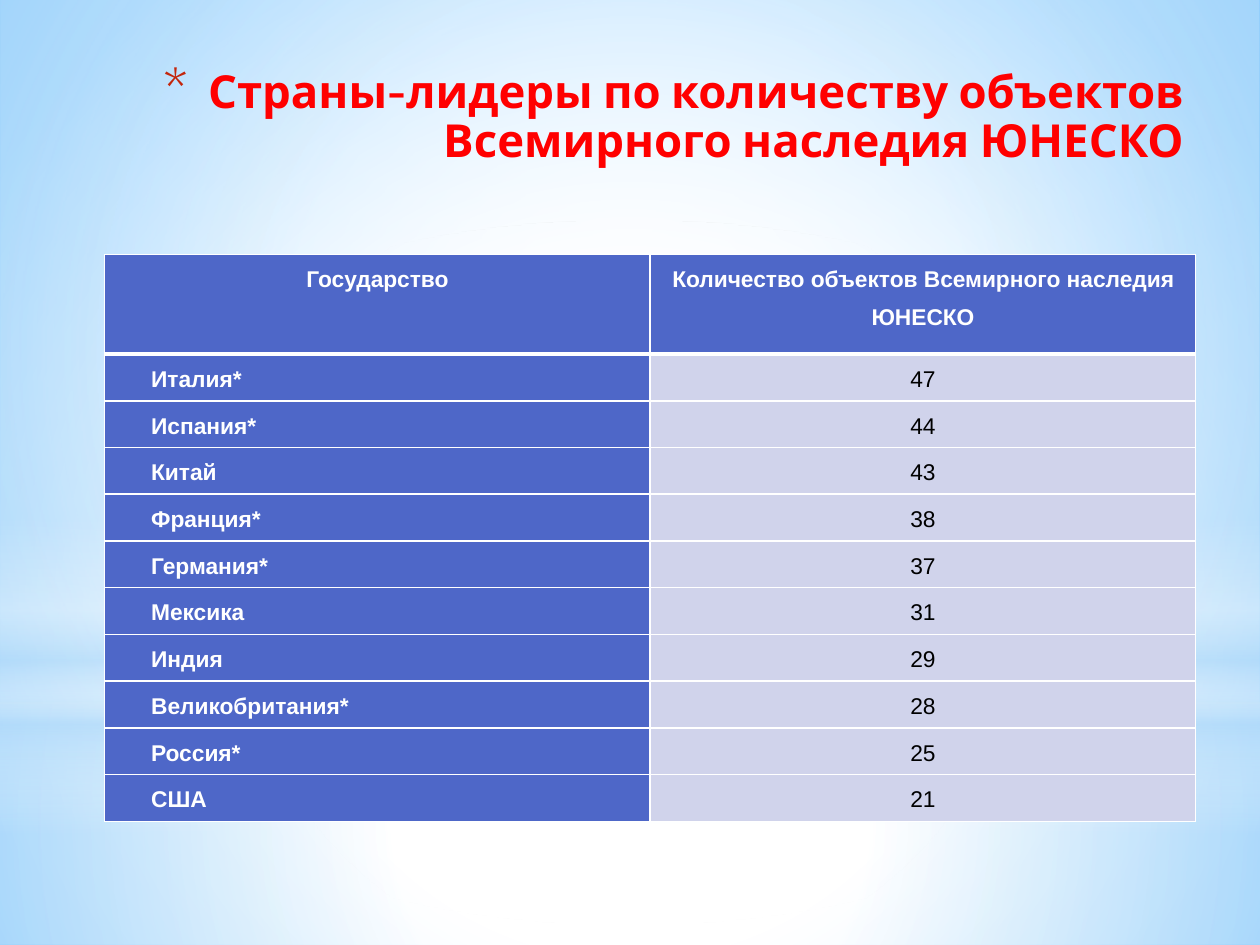
from lxml import etree
from pptx import Presentation
from pptx import util as u
from pptx.dml.color import RGBColor
from pptx.enum import shapes, text
from pptx.oxml import parse_xml
from pptx.oxml.ns import nsdecls, qn

WIDTH, HEIGHT = u.Inches(10), u.Inches(7.5)
WHITE, SKY, INDIGO, LAVENDER = "FFFFFF", "B4DCFA", "4E67C8", "D0D3EB"
CENTRE = (50, 50, 50, 50)
HEADER = ("Государство", "Количество объектов Всемирного наследия ЮНЕСКО")
COUNTRIES = [
    ("Италия*", 47), ("Испания*", 44), ("Китай", 43), ("Франция*", 38),
    ("Германия*", 37), ("Мексика", 31), ("Индия", 29),
    ("Великобритания*", 28), ("Россия*", 25), ("США", 21),
]


def colour(value):
    return RGBColor.from_string(value)


def set_gradient(element, stops, focus=None):
    """Replace the solid fill by (position, colour, opacity) stops, radial if focus is given."""
    stop_xml = "".join(
        f'<a:gs pos="{position * 1000}"><a:srgbClr val="{value}">'
        f'<a:alpha val="{opacity * 1000}"/></a:srgbClr></a:gs>'
        for position, value, opacity in stops)
    if focus:
        left, top, right, bottom = (share * 1000 for share in focus)
        direction = (f'<a:path path="circle"><a:fillToRect l="{left}" t="{top}" '
                     f'r="{right}" b="{bottom}"/></a:path>')
    else:
        direction = '<a:lin ang="5400000" scaled="0"/>'
    solid = element.find(".//" + qn("a:solidFill"))
    solid.getparent().replace(solid, parse_xml(
        f'<a:gradFill {nsdecls("a")} rotWithShape="1"><a:gsLst>{stop_xml}</a:gsLst>'
        f'{direction}</a:gradFill>'))


def add_backdrop(slide):
    fill = slide.background.fill
    fill.solid()
    fill.fore_color.rgb = colour(WHITE)
    set_gradient(slide.element, [(0, WHITE, 100), (42, WHITE, 100), (100, "63BCFF", 100)],
                 (24, 44, 24, 12))
    rectangle, oval = shapes.MSO_SHAPE.RECTANGLE, shapes.MSO_SHAPE.OVAL
    layers = [
        (rectangle, 5.58, 1.92, [(0, WHITE, 91), (37, WHITE, 76), (100, SKY, 79)], CENTRE),
        (rectangle, 0, 5.58, [(0, WHITE, 89), (48, WHITE, 62), (100, SKY, 79)], CENTRE),
        (rectangle, 4.12, 2.5, [(0, WHITE, 0), (29, WHITE, 30), (45, SKY, 40),
                                (55, WHITE, 26), (65, SKY, 60), (100, WHITE, 0)], None),
        (oval, 1.75, 5.58, [(0, WHITE, 100), (56, WHITE, 0)], CENTRE),
    ]
    for kind, top, height, stops, focus in layers:
        shape = slide.shapes.add_shape(kind, 0, u.Inches(top), WIDTH, u.Inches(height))
        shape.shadow.inherit = False
        shape.line.fill.background()
        shape.fill.solid()
        shape.fill.fore_color.rgb = colour(WHITE)
        set_gradient(shape.element, stops, focus)


def place_title(slide, left, top, width, height):
    title = slide.shapes.title
    slide.shapes.element.append(title.element)  # in front of the backdrop
    title.left, title.top, title.width, title.height = left, top, width, height
    frame = title.text_frame
    frame.text = "Страны-лидеры по количеству объектов Всемирного наследия ЮНЕСКО"
    frame.vertical_anchor = text.MSO_ANCHOR.TOP
    frame.word_wrap = True
    paragraph = frame.paragraphs[0]
    paragraph.alignment = text.PP_ALIGN.RIGHT
    paragraph.line_spacing = 0.9
    font = paragraph.font
    font.name, font.size, font.bold = "Cabin", u.Pt(26), True
    font.color.rgb = colour("FF0000")
    properties = paragraph._p.get_or_add_pPr()
    properties.set("marL", str(u.Inches(0.35)))
    properties.set("indent", str(-u.Inches(0.35)))
    bullet = parse_xml(
        f'<a:pPr {nsdecls("a")}><a:buClr><a:srgbClr val="C3260C"/></a:buClr>'
        '<a:buSzPct val="128000"/><a:buFont typeface="Cabin"/><a:buChar char="*"/></a:pPr>')
    defaults = properties.find(qn("a:defRPr"))
    for part in list(bullet):
        defaults.addprevious(part)


def set_borders(cell, bottom):
    properties = cell._tc.get_or_add_tcPr()
    for index, (side, points) in enumerate(
            [("lnL", 1), ("lnR", 1), ("lnT", 1), ("lnB", bottom)]):
        line = etree.Element(qn("a:" + side), w=str(u.Pt(points)))
        solid = etree.SubElement(line, qn("a:solidFill"))
        etree.SubElement(solid, qn("a:srgbClr"), val=WHITE)
        properties.insert(index, line)


def fill_cell(cell, content, is_header, is_country):
    heading = is_header or is_country
    cell.text = str(content)
    cell.margin_left = cell.margin_right = u.Inches(0.07)
    cell.margin_top = cell.margin_bottom = 0
    cell.fill.solid()
    cell.fill.fore_color.rgb = colour(INDIGO if heading else LAVENDER)
    set_borders(cell, 3 if is_header else 1)
    paragraph = cell.text_frame.paragraphs[0]
    paragraph.line_spacing = 1.5
    paragraph.alignment = text.PP_ALIGN.CENTER
    if is_country and not is_header:
        paragraph.alignment = text.PP_ALIGN.JUSTIFY
        paragraph._p.get_or_add_pPr().set("indent", str(u.Inches(0.3)))
    font = paragraph.runs[0].font
    font.name, font.size, font.bold = "Arial", u.Pt(13), heading
    font.color.rgb = colour(WHITE if heading else "000000")


def add_country_table(slide, left, top, width, height):
    rows = [HEADER] + COUNTRIES
    table = slide.shapes.add_table(len(rows), len(HEADER), left, top, width, height).table
    header_height = u.Inches(0.79)
    for index, values in enumerate(rows):
        table.rows[index].height = (
            (height - header_height) // len(COUNTRIES) if index else header_height)
        for column, content in enumerate(values):
            fill_cell(table.cell(index, column), content, index == 0, column == 0)


def main():
    presentation = Presentation()
    presentation.slide_width, presentation.slide_height = WIDTH, HEIGHT
    slide = presentation.slides.add_slide(presentation.slide_layouts[5])
    add_backdrop(slide)
    place_title(slide, u.Inches(0.5), u.Inches(0.5), u.Inches(9), u.Inches(1.5))
    add_country_table(slide, u.Inches(0.83), u.Inches(2.02), u.Inches(8.66), u.Inches(4.5))
    presentation.save("out.pptx")


if __name__ == "__main__":
    main()
